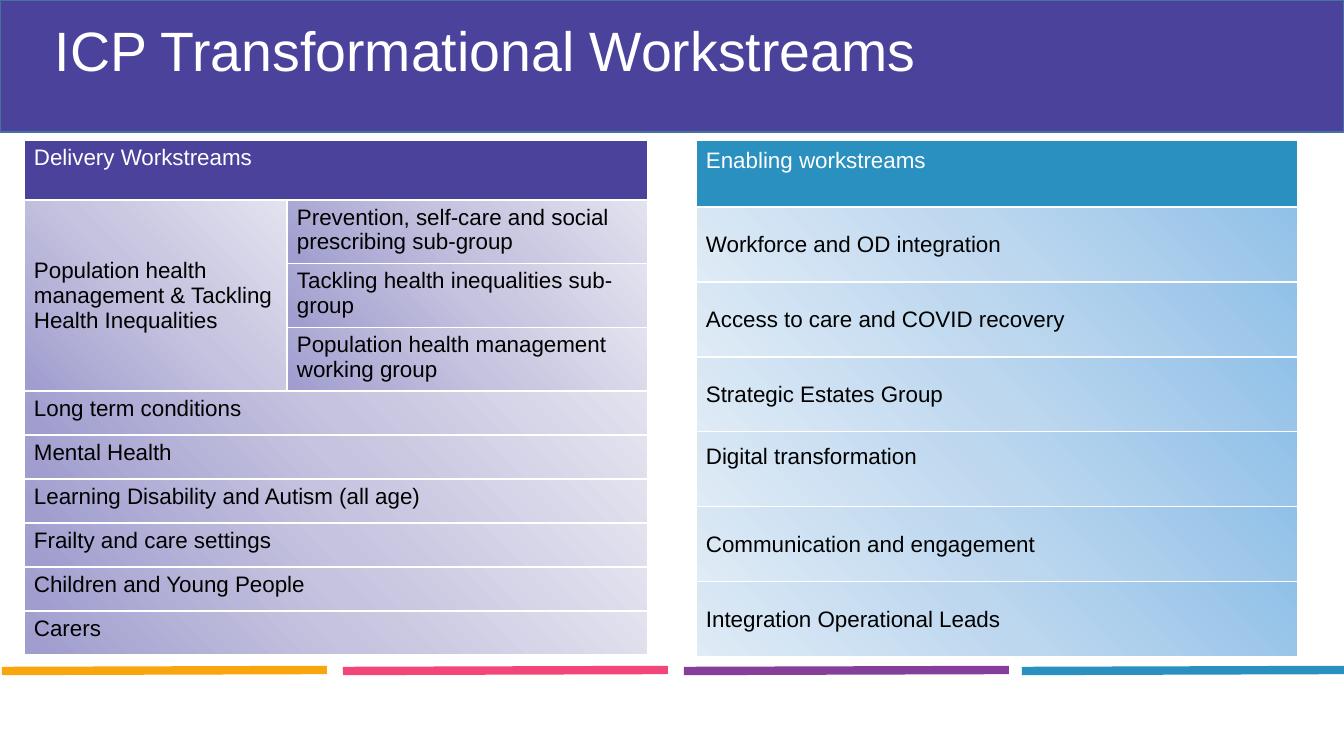
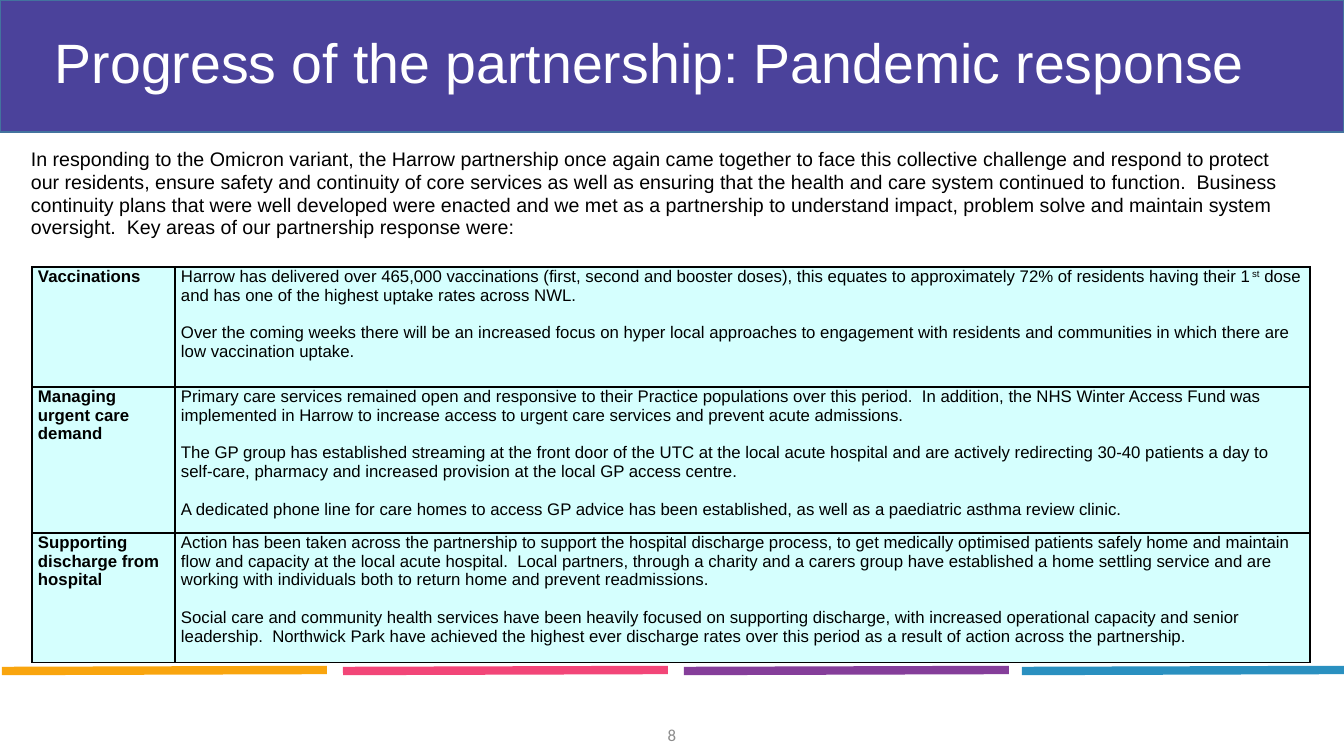
from dataclasses import dataclass

import lxml.etree
import pptx
import pptx.dml.color
import pptx.enum.shapes
import pptx.enum.text
import pptx.oxml
import pptx.oxml.ns
import pptx.util

EMU_PER_PX = 914400 / 100.8
PAGE_WIDTH, PAGE_HEIGHT = 1344, 756
COLOURS = {
    "band": "4B429B", "band_edge": "43739E", "white": "FFFFFF", "black": "000000",
    "orange": "F9A50E", "pink": "F24678", "purple": "853E9A", "blue": "2A90C0",
    "mint": "D5FFFE", "grey": "8C8C8C",
}
MIDDLE = pptx.enum.text.MSO_ANCHOR.MIDDLE
TOP = pptx.enum.text.MSO_ANCHOR.TOP


@dataclass(frozen=True)
class Gradient:
    stops: tuple[str, str, str]
    direction: str


GRADIENTS = {
    "lilac": Gradient(("9F9CCE", "C5C3DF", "E3E2EF"), '<a:lin ang="18900000" scaled="1"/>'),
    "sky": Gradient(
        ("91C1E8", "BDD7EF", "DFEBF6"),
        '<a:path path="circle"><a:fillToRect l="100000" b="100000"/></a:path>',
    ),
}


@dataclass(frozen=True)
class Style:
    size: float
    colour: str = "black"
    font: str = "Arial"
    bold: bool = False
    line_spacing: float | None = None
    space_between: float = 0
    centred: bool = False


@dataclass(frozen=True)
class Box:
    left: int
    top: int
    width: int
    height: int


@dataclass(frozen=True)
class Span:
    text: str
    superscript: bool = False


@dataclass(frozen=True)
class Cell:
    row: int
    column: int
    paras: tuple[str | tuple[Span, ...], ...]
    fill: str
    style: Style
    rows: int = 1
    columns: int = 1
    anchor: pptx.enum.text.MSO_ANCHOR = TOP
    margins: tuple[int, int, int, int] = (10, 5, 10, 5)


@dataclass(frozen=True)
class Stripe:
    left: int
    colour: str


@dataclass(frozen=True)
class ResponseArea:
    name: str
    paras: tuple[str | tuple[Span, ...], ...]


STRIPES = (Stripe(2, "orange"), Stripe(343, "pink"), Stripe(684, "purple"), Stripe(1022, "blue"))
STRIPE_LENGTH = 325

TITLE = Style(39.6, "white", line_spacing=0.9)
INTRO = Style(14, line_spacing=0.96)
PAGE_NUMBER = Style(12, "grey", "Calibri", centred=True)
HEADING = Style(16, "white")
WORKSTREAM = Style(16)
AREA_NAME = Style(12, bold=True)
AREA_TEXT = Style(12, space_between=13.4)
# A deeper bottom margin lifts text above the middle of its cell.
LIFTED = (10, 5, 10, 30)

SUB_GROUPS = (
    "Prevention, self-care and social prescribing sub-group",
    "Tackling health inequalities sub-group",
    "Population health management working group",
)
DELIVERY = (
    "Long term conditions",
    "Mental Health",
    "Learning Disability and Autism (all age)",
    "Frailty and care settings",
    "Children and Young People",
    "Carers",
)
ENABLING = (
    "Workforce and OD integration",
    "Access to care and COVID recovery",
    "Strategic Estates Group",
    "Digital transformation",
    "Communication and engagement",
    "Integration Operational Leads",
)
INTRO_TEXT = (
    "In responding to the Omicron variant, the Harrow partnership once again came together to face "
    "this collective challenge and respond to protect our residents, ensure safety and continuity of "
    "core services as well as ensuring that the health and care system continued to function.  "
    "Business continuity plans that were well developed were enacted and we met as a partnership to "
    "understand impact, problem solve and maintain system oversight.  Key areas of our partnership "
    "response were:"
)
RESPONSE_AREAS = (
    ResponseArea("Vaccinations", (
        (
            Span("Harrow has delivered over 465,000 vaccinations (first, second and booster doses), "
                 "this equates to approximately 72% of residents having their 1"),
            Span("st", superscript=True),
            Span(" dose and has one of the highest uptake rates across NWL."),
        ),
        "Over the coming weeks there will be an increased focus on hyper local approaches to "
        "engagement with residents and communities in which there are low vaccination uptake.",
    )),
    ResponseArea("Managing urgent care demand", (
        "Primary care services remained open and responsive to their Practice populations over this "
        "period.  In addition, the NHS Winter Access Fund was implemented in Harrow to increase "
        "access to urgent care services and prevent acute admissions.",
        "The GP group has established streaming at the front door of the UTC at the local acute "
        "hospital and are actively redirecting 30-40 patients a day to self-care, pharmacy and "
        "increased provision at the local GP access centre.",
        "A dedicated phone line for care homes to access GP advice has been established, as well as "
        "a paediatric asthma review clinic.",
    )),
    ResponseArea("Supporting discharge from hospital", (
        "Action has been taken across the partnership to support the hospital discharge process, to "
        "get medically optimised patients safely home and maintain flow and capacity at the local "
        "acute hospital.  Local partners, through a charity and a carers group have established a "
        "home settling service and are working with individuals both to return home and prevent "
        "readmissions.",
        "Social care and community health services have been heavily focused on supporting "
        "discharge, with increased operational capacity and senior leadership.  Northwick Park have "
        "achieved the highest ever discharge rates over this period as a result of action across "
        "the partnership.",
    )),
)


def px(length: int) -> pptx.util.Emu:
    return pptx.util.Emu(round(length * EMU_PER_PX))


def rgb(name: str) -> pptx.dml.color.RGBColor:
    return pptx.dml.color.RGBColor.from_string(COLOURS[name])


def place(box: Box) -> tuple[pptx.util.Emu, ...]:
    return px(box.left), px(box.top), px(box.width), px(box.height)


def write_paras(frame, paras: tuple, style: Style) -> None:
    for index, content in enumerate(paras):
        para = frame.add_paragraph() if index else frame.paragraphs[0]
        for span in (Span(content),) if isinstance(content, str) else content:
            run = para.add_run()
            run.text = span.text
            if span.superscript:
                run._r.get_or_add_rPr().set("baseline", "30000")
        if index and style.space_between:
            para.space_before = pptx.util.Pt(style.space_between)
        if style.line_spacing:
            para.line_spacing = style.line_spacing
        if style.centred:
            para.alignment = pptx.enum.text.PP_ALIGN.CENTER
        para.font.name = style.font
        para.font.size = pptx.util.Pt(style.size)
        para.font.bold = style.bold
        para.font.color.rgb = rgb(style.colour)


def add_text(page, box: Box, text: str, style: Style, anchor=MIDDLE) -> None:
    frame = page.shapes.add_textbox(*place(box)).text_frame
    frame.word_wrap = True
    frame.vertical_anchor = anchor
    write_paras(frame, (text,), style)


def add_borders(cell, colour: str) -> None:
    properties = cell._tc.get_or_add_tcPr()
    for side in "LRTB":
        properties.append(pptx.oxml.parse_xml(
            f'<a:ln{side} {pptx.oxml.ns.nsdecls("a")} w="12700"><a:solidFill>'
            f'<a:srgbClr val="{COLOURS[colour]}"/></a:solidFill></a:ln{side}>'
        ))


def fill_cell(cell, fill: str) -> None:
    if fill in COLOURS:
        cell.fill.solid()
        cell.fill.fore_color.rgb = rgb(fill)
        return
    gradient = GRADIENTS[fill]
    stops = "".join(
        f'<a:gs pos="{index * 50000}"><a:srgbClr val="{colour}"/></a:gs>'
        for index, colour in enumerate(gradient.stops)
    )
    cell._tc.get_or_add_tcPr().append(pptx.oxml.parse_xml(
        f'<a:gradFill {pptx.oxml.ns.nsdecls("a")} rotWithShape="1">'
        f"<a:gsLst>{stops}</a:gsLst>{gradient.direction}</a:gradFill>"
    ))


def add_grid(page, left: int, top: int, widths: list[int], heights: list[int],
             cells: list[Cell], border: str) -> None:
    box = Box(left, top, sum(widths), sum(heights))
    table = page.shapes.add_table(len(heights), len(widths), *place(box)).table
    table.first_row = table.horz_banding = False
    for column, width in zip(table.columns, widths):
        column.width = px(width)
    for row, height in zip(table.rows, heights):
        row.height = px(height)
    for cell in table.iter_cells():
        add_borders(cell, border)
    for item in cells:
        cell = table.cell(item.row, item.column)
        if item.rows * item.columns > 1:
            cell.merge(table.cell(item.row + item.rows - 1, item.column + item.columns - 1))
        fill_cell(cell, item.fill)
        cell.vertical_anchor = item.anchor
        cell.margin_left, cell.margin_top, cell.margin_right, cell.margin_bottom = map(px, item.margins)
        write_paras(cell.text_frame, item.paras, item.style)


def add_page(deck, title: str, title_height: int):
    """Add a blank slide with the title band and footer stripes."""
    page = deck.slides.add_slide(deck.slide_layouts[6])
    band = page.shapes.add_shape(
        pptx.enum.shapes.MSO_SHAPE.RECTANGLE, *place(Box(0, 0, PAGE_WIDTH, 132)))
    band.shadow.inherit = False
    band.fill.solid()
    band.fill.fore_color.rgb = rgb("band")
    band.line.color.rgb = rgb("band_edge")
    band.line.width = pptx.util.Pt(1)
    for stripe in STRIPES:
        right = min(stripe.left + STRIPE_LENGTH, PAGE_WIDTH)
        line = page.shapes.add_connector(
            pptx.enum.shapes.MSO_CONNECTOR.STRAIGHT, px(stripe.left), px(671), px(right), px(670))
        line.line.color.rgb = rgb(stripe.colour)
        line.line.width = pptx.util.Pt(6)
        lxml.etree.SubElement(line._element.spPr, pptx.oxml.ns.qn("a:effectLst"))
    add_text(page, Box(45, 36, 1254, title_height), title, TITLE)
    return page


def add_workstreams(deck) -> None:
    page = add_page(deck, "ICP Transformational Workstreams", 36)
    delivery = [
        Cell(0, 0, ("Delivery Workstreams",), "band", HEADING, columns=2),
        Cell(1, 0, ("Population health management & Tackling Health Inequalities",), "lilac",
             WORKSTREAM, rows=len(SUB_GROUPS), anchor=MIDDLE),
    ]
    delivery += [Cell(row, 1, (name,), "lilac", WORKSTREAM) for row, name in enumerate(SUB_GROUPS, 1)]
    delivery += [Cell(row, 0, (name,), "lilac", WORKSTREAM, columns=2)
                 for row, name in enumerate(DELIVERY, 1 + len(SUB_GROUPS))]
    heights = [60] * (1 + len(SUB_GROUPS)) + [44] * len(DELIVERY)
    add_grid(page, 24, 140, [263, 361], heights, delivery, "white")

    enabling = [Cell(0, 0, ("Enabling workstreams",), "blue", HEADING, anchor=MIDDLE, margins=LIFTED)]
    for row, name in enumerate(ENABLING, 1):
        margins = LIFTED if name == "Digital transformation" else Cell.margins
        enabling.append(Cell(row, 0, (name,), "sky", WORKSTREAM, anchor=MIDDLE, margins=margins))
    add_grid(page, 696, 140, [602], [67] + [75] * len(ENABLING), enabling, "white")


def add_pandemic_response(deck) -> None:
    page = add_page(deck, "Progress of the partnership: Pandemic response", 60)
    add_text(page, Box(21, 144, 1280, 100), INTRO_TEXT, INTRO, TOP)
    add_text(page, Box(521, 715, 302, 40), "8", PAGE_NUMBER)
    cells = []
    for row, area in enumerate(RESPONSE_AREAS):
        cells.append(Cell(row, 0, (area.name,), "mint", AREA_NAME, margins=(6, 0, 6, 0)))
        cells.append(Cell(row, 1, area.paras, "mint", AREA_TEXT, margins=(6, 0, 6, 0)))
    add_grid(page, 32, 267, [143, 1135], [120, 146, 130], cells, "black")


def main() -> None:
    deck = pptx.Presentation()
    deck.slide_width, deck.slide_height = px(PAGE_WIDTH), px(PAGE_HEIGHT)
    add_workstreams(deck)
    add_pandemic_response(deck)
    deck.save("out.pptx")


if __name__ == "__main__":
    main()
